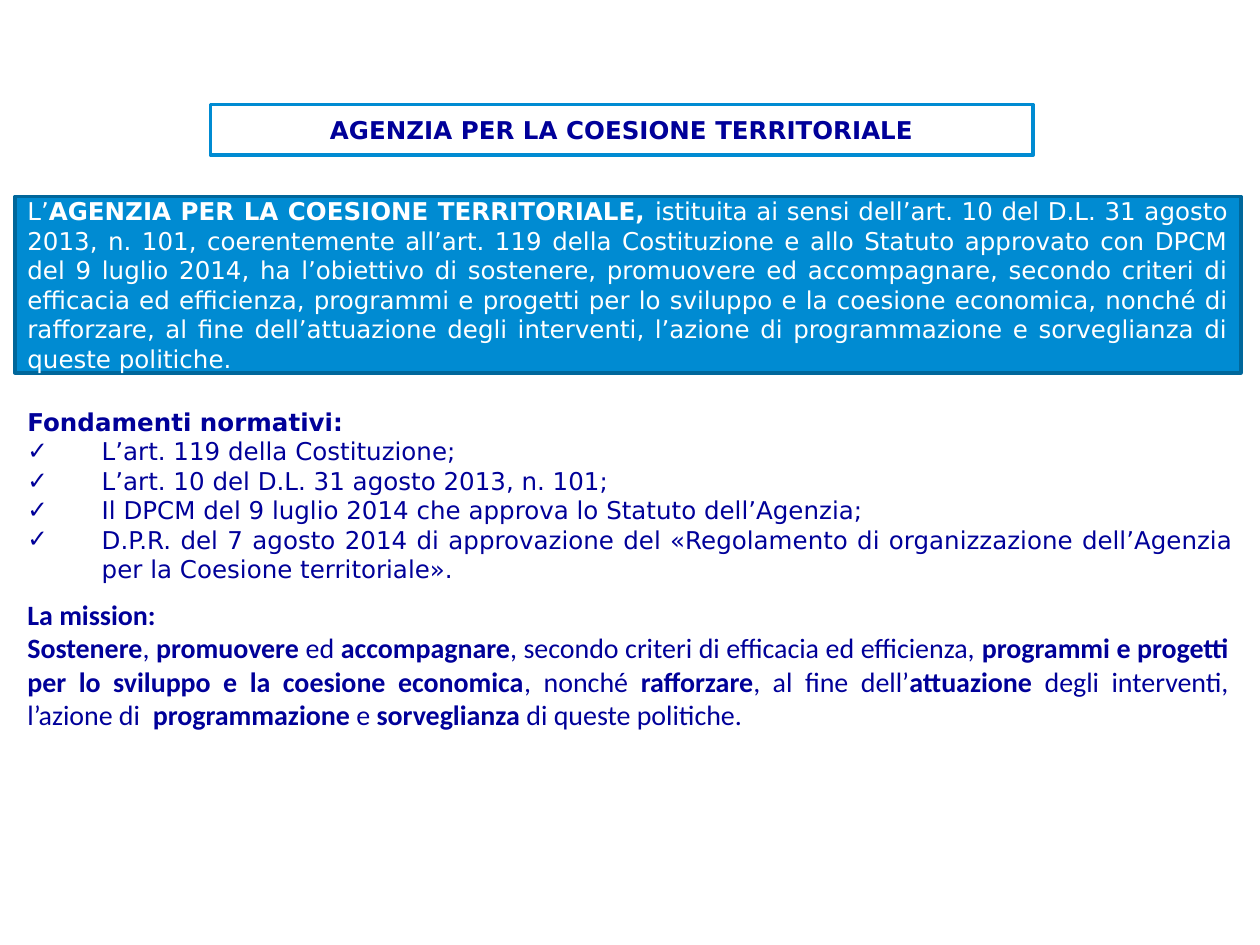
from lxml.etree import SubElement
from pptx import Presentation
from pptx.dml.color import RGBColor
from pptx.enum.shapes import MSO_SHAPE as Shape
from pptx.enum.text import MSO_ANCHOR as Anchor, MSO_AUTO_SIZE as AutoSize, PP_ALIGN as Align
from pptx.oxml.ns import qn
from pptx.util import Pt

BLUE = RGBColor(0x00, 0x8B, 0xD2)
DARK_BLUE = RGBColor(0x00, 0x67, 0x9B)
NAVY = RGBColor(0x00, 0x00, 0x99)
WHITE = RGBColor(0xFF, 0xFF, 0xFF)
SANS = "DejaVu Sans"
LEFT = 8.6
WIDTH = 700.6
INDENT = 42.5

AGENCY = "AGENZIA PER LA COESIONE TERRITORIALE"
PURPOSE = (
    "istituita ai sensi dell’art. 10 del D.L. 31 agosto 2013, n. 101, "
    "coerentemente all’art. 119 della Costituzione e allo Statuto approvato con "
    "DPCM del 9 luglio 2014, ha l’obiettivo di sostenere, promuovere ed "
    "accompagnare, secondo criteri di efficacia ed efficienza, programmi e "
    "progetti per lo sviluppo e la coesione economica, nonché di rafforzare, al "
    "fine dell’attuazione degli interventi, l’azione di programmazione e "
    "sorveglianza di queste politiche. "
)
LEGAL_BASES = [
    "L’art. 119 della Costituzione;",
    "L’art. 10 del D.L. 31 agosto 2013, n. 101;",
    "Il DPCM del 9 luglio 2014 che approva lo Statuto dell’Agenzia;",
    "D.P.R. del 7 agosto 2014 di approvazione del «Regolamento di organizzazione "
    "dell’Agenzia per la Coesione territoriale».",
]
# Bold and regular pieces alternate, starting with bold
MISSION = [
    "Sostenere", ", ",
    "promuovere ", "ed ",
    "accompagnare", ", secondo criteri di efficacia ed efficienza, ",
    "programmi e progetti per lo sviluppo e la coesione economica", ", nonché ",
    "rafforzare", ", al fine dell’",
    "attuazione", " degli interventi, l’azione di  ",
    "programmazione ", "e ",
    "sorveglianza", " di queste politiche. ",
]


def add_box(slide, left, top, width, height, fill, line):
    shape = slide.shapes.add_shape(
        Shape.RECTANGLE, Pt(left), Pt(top), Pt(width), Pt(height))
    shape.shadow.inherit = False
    shape.fill.solid()
    shape.fill.fore_color.rgb = fill
    shape.line.color.rgb = line
    shape.line.width = Pt(2)
    shape.text_frame.word_wrap = True
    shape.text_frame.vertical_anchor = Anchor.MIDDLE
    return shape.text_frame


def add_text(slide, left, top, width, height):
    shape = slide.shapes.add_textbox(Pt(left), Pt(top), Pt(width), Pt(height))
    shape.text_frame.word_wrap = True
    shape.text_frame.auto_size = AutoSize.SHAPE_TO_FIT_TEXT
    return shape.text_frame


def style(paragraph, color, size=14, name=SANS, bold=None, align=Align.JUSTIFY):
    paragraph.alignment = align
    font = paragraph.font
    font.name, font.size, font.bold = name, Pt(size), bold
    font.color.rgb = color


def add_runs(paragraph, pieces, first_bold):
    """Add pieces that switch between bold and regular."""
    for index, text in enumerate(pieces):
        run = paragraph.add_run()
        run.text = text
        run.font.bold = (index % 2 == 0) == first_bold


def add_check(paragraph):
    properties = paragraph._p.get_or_add_pPr()
    properties.set("marL", str(Pt(INDENT)))
    properties.set("indent", str(-Pt(INDENT)))
    SubElement(properties, qn("a:buFont"), typeface=SANS)
    SubElement(properties, qn("a:buChar"), char="✓")


def main():
    presentation = Presentation()
    presentation.slide_width, presentation.slide_height = Pt(720), Pt(540)
    slide = presentation.slides.add_slide(presentation.slide_layouts[6])

    # Agency description
    paragraph = add_box(slide, LEFT, 112.3, WIDTH, 100.8, BLUE, DARK_BLUE).paragraphs[0]
    add_runs(paragraph, ["L’", AGENCY + ", ", PURPOSE], first_bold=False)
    style(paragraph, WHITE)

    # Legal bases
    frame = add_text(slide, LEFT, 229, 703.4, 108.7)
    frame.text = "Fondamenti normativi:"
    style(frame.paragraphs[0], NAVY, bold=True)
    for text in LEGAL_BASES:
        paragraph = frame.add_paragraph()
        paragraph.text = text
        add_check(paragraph)
        style(paragraph, NAVY)

    # Title
    frame = add_box(slide, 120.2, 59.8, 470.2, 28.8, WHITE, BLUE)
    frame.text = AGENCY
    style(frame.paragraphs[0], NAVY, bold=True, align=Align.CENTER)

    # Mission
    frame = add_text(slide, LEFT, 337.7, WIDTH, 85)
    frame.text = "La mission:"
    style(frame.paragraphs[0], NAVY, 16, "Calibri", bold=True)
    paragraph = frame.add_paragraph()
    add_runs(paragraph, MISSION, first_bold=True)
    style(paragraph, NAVY, 16, "Calibri")

    presentation.save("out.pptx")


if __name__ == "__main__":
    main()
